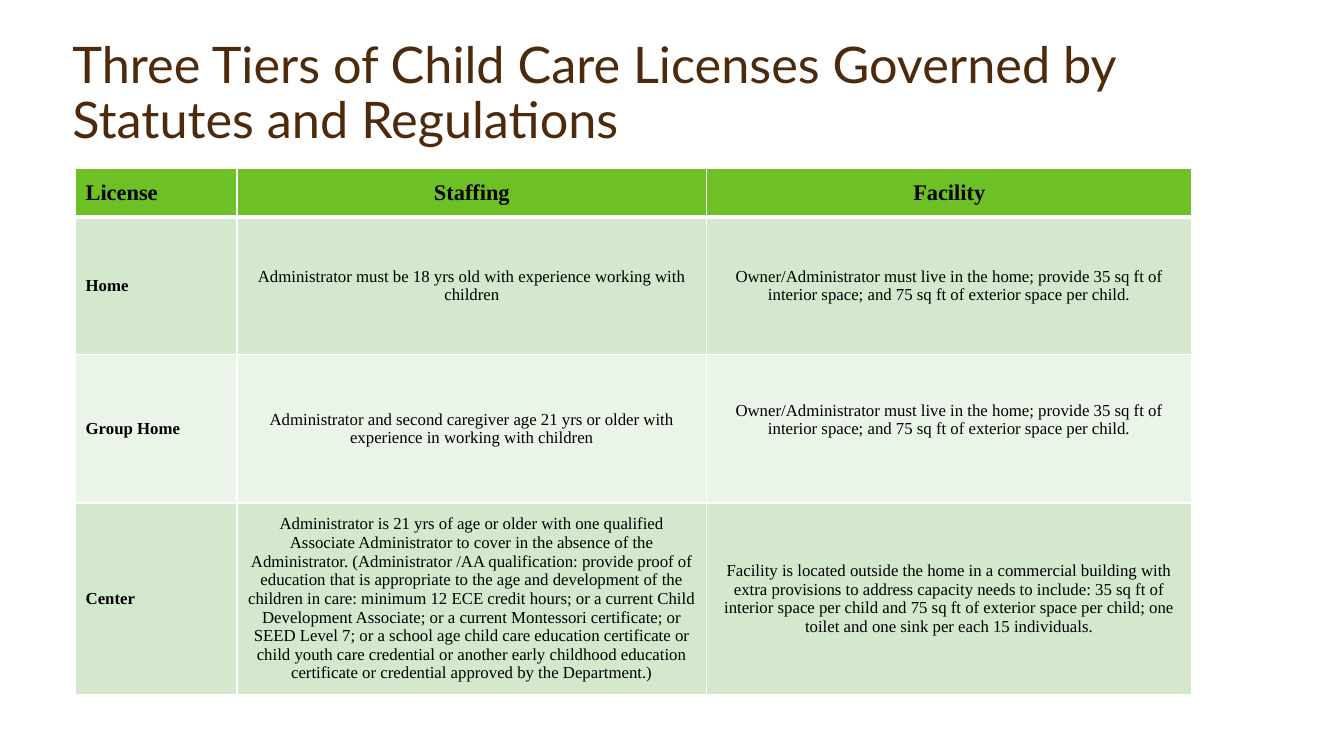
from dataclasses import dataclass

from lxml import etree
from pptx import Presentation
from pptx.dml.color import RGBColor
from pptx.enum.text import MSO_ANCHOR, PP_ALIGN
from pptx.oxml.ns import qn
from pptx.slide import Slide
from pptx.table import _Cell
from pptx.util import Inches, Pt

BROWN = RGBColor(0x4D, 0x2A, 0x0B)
BLACK = RGBColor(0x00, 0x00, 0x00)
WHITE = RGBColor(0xFF, 0xFF, 0xFF)
HEADER_GREEN = RGBColor(0x6D, 0xC0, 0x25)
BAND_GREEN = RGBColor(0xD4, 0xE8, 0xCD)
PALE_GREEN = RGBColor(0xEB, 0xF4, 0xE8)

LEFT, CENTER = PP_ALIGN.LEFT, PP_ALIGN.CENTER
MIDDLE, BOTTOM = MSO_ANCHOR.MIDDLE, MSO_ANCHOR.BOTTOM

TITLE_FONT = "Lato"
TABLE_FONT = "Times New Roman"
TITLE = "Three Tiers of Child Care Licenses Governed by Statutes and Regulations"
COLUMN_WIDTHS = (1.6, 4.66, 4.81)
THIN, THICK = 1, 3
HOME_FACILITY = (
    "Owner/Administrator must live in the home; provide 35 sq ft of interior "
    "space; and 75 sq ft of exterior space per child."
)


@dataclass(frozen=True)
class TierRow:
    texts: tuple[str, str, str]
    height: float
    fill: RGBColor
    size: int = 12
    header: bool = False
    facility_margin: float = 0.05


ROWS = (
    TierRow(("License", "Staffing", "Facility"), 0.48, HEADER_GREEN, 16, True),
    TierRow(
        (
            "Home",
            "Administrator must be 18 yrs old with experience working with children",
            HOME_FACILITY,
        ),
        1.37,
        BAND_GREEN,
    ),
    TierRow(
        (
            "Group Home",
            "Administrator and second caregiver age 21 yrs or older with "
            "experience in working with children",
            HOME_FACILITY,
        ),
        1.47,
        PALE_GREEN,
        facility_margin=0.23,
    ),
    TierRow(
        (
            "Center",
            "Administrator is 21 yrs of age or older with one qualified Associate "
            "Administrator to cover in the absence of the Administrator. "
            "(Administrator /AA qualification: provide proof of education that is "
            "appropriate to the age and development of the children in care: "
            "minimum 12 ECE credit hours; or a current Child Development Associate; "
            "or a current Montessori certificate; or SEED Level 7; or a school age "
            "child care education certificate or child youth care credential or "
            "another early childhood education certificate or credential approved "
            "by the Department.)",
            "Facility is located outside the home in a commercial building with "
            "extra provisions to address capacity needs to include: 35 sq ft of "
            "interior space per child and 75 sq ft of exterior space per child; one "
            "toilet and one sink per each 15 individuals.",
        ),
        1.73,
        BAND_GREEN,
    ),
)


def add_title(slide: Slide) -> None:
    box = slide.shapes.add_textbox(Inches(0.62), Inches(0.2), Inches(11.49), Inches(1.33))
    frame = box.text_frame
    frame.word_wrap = True
    frame.vertical_anchor = BOTTOM
    frame.text = TITLE
    paragraph = frame.paragraphs[0]
    paragraph.line_spacing = 0.9
    paragraph.font.name = TITLE_FONT
    paragraph.font.size = Pt(36)
    paragraph.font.color.rgb = BROWN


def set_borders(cell: _Cell, top: int, bottom: int) -> None:
    properties = cell._tc.get_or_add_tcPr()
    widths = {"a:lnL": THIN, "a:lnR": THIN, "a:lnT": top, "a:lnB": bottom}
    for tag, width in widths.items():
        line = etree.SubElement(properties, qn(tag), w=str(Pt(width)))
        fill = etree.SubElement(line, qn("a:solidFill"))
        etree.SubElement(fill, qn("a:srgbClr"), val=str(WHITE))


def format_cell(cell: _Cell, row: TierRow, column: int) -> None:
    cell.fill.solid()
    cell.fill.fore_color.rgb = row.fill
    cell.vertical_anchor = MIDDLE
    cell.text_frame.text = row.texts[column]
    paragraph = cell.text_frame.paragraphs[0]
    paragraph.alignment = LEFT if column == 0 else CENTER
    font = paragraph.runs[0].font
    font.name = TABLE_FONT
    font.size = Pt(row.size)
    font.bold = row.header or column == 0
    font.color.rgb = BLACK


def add_license_table(slide: Slide) -> None:
    table = slide.shapes.add_table(
        len(ROWS),
        len(COLUMN_WIDTHS),
        Inches(0.75),
        Inches(1.67),
        Inches(sum(COLUMN_WIDTHS)),
        Inches(sum(row.height for row in ROWS)),
    ).table
    for column, width in enumerate(COLUMN_WIDTHS):
        table.columns[column].width = Inches(width)
    for index, row in enumerate(ROWS):
        table.rows[index].height = Inches(row.height)
        for column in range(len(COLUMN_WIDTHS)):
            cell = table.cell(index, column)
            set_borders(
                cell,
                top=THICK if index == 1 else THIN,
                bottom=THICK if row.header else THIN,
            )
            format_cell(cell, row, column)
        table.cell(index, 2).margin_bottom = Inches(row.facility_margin)


def main() -> None:
    presentation = Presentation()
    presentation.slide_width = Inches(13.33)
    presentation.slide_height = Inches(7.5)
    slide = presentation.slides.add_slide(presentation.slide_layouts[6])

    # Heading
    add_title(slide)

    # License tiers
    add_license_table(slide)

    presentation.save("out.pptx")


if __name__ == "__main__":
    main()
